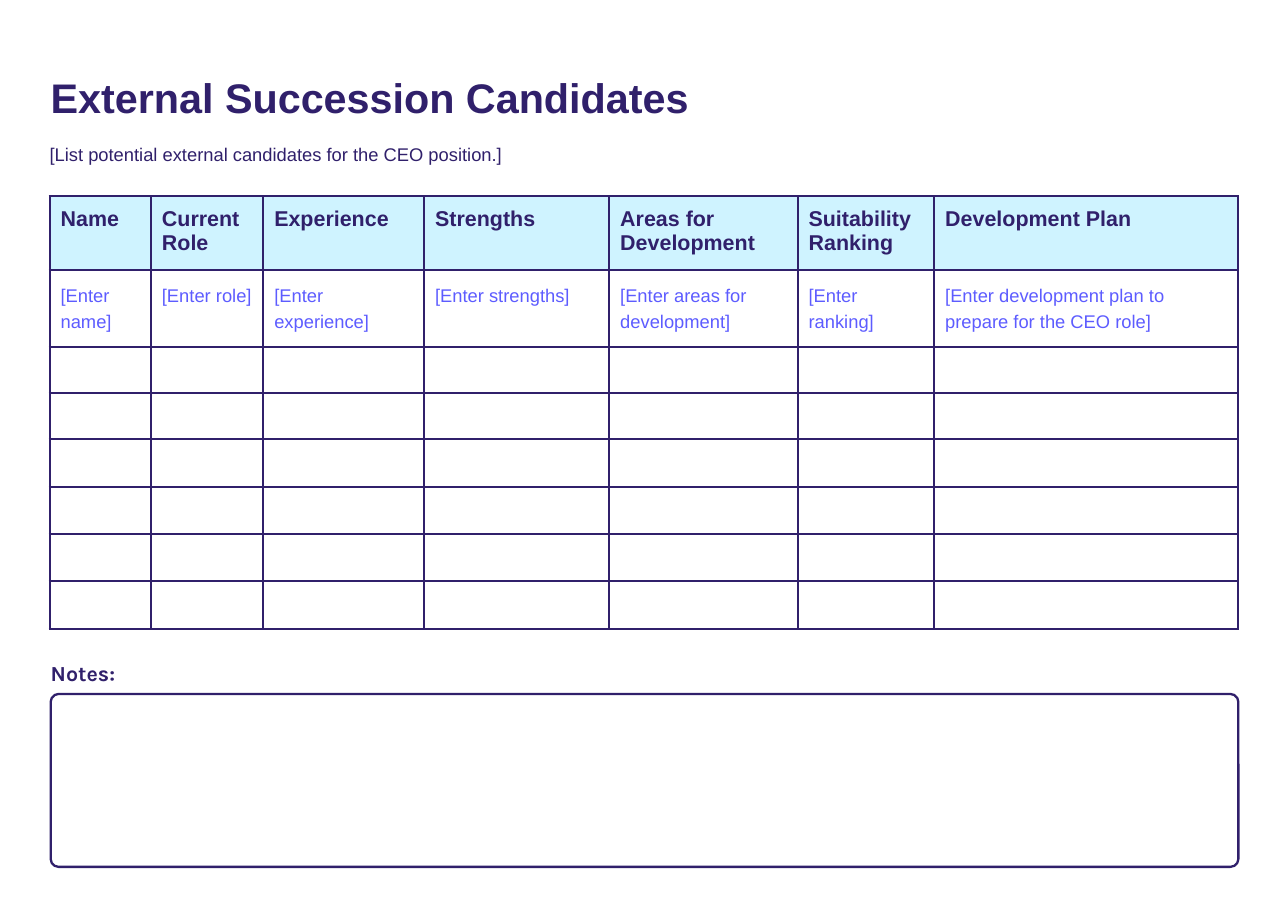
from lxml import etree
from pptx import Presentation
from pptx.dml.color import RGBColor
from pptx.enum.shapes import MSO_SHAPE
from pptx.enum.text import MSO_ANCHOR
from pptx.oxml.ns import qn
from pptx.util import Inches, Pt

NAVY = RGBColor(0x30, 0x20, 0x6B)
VIOLET = RGBColor(0x5D, 0x5C, 0xFF)
PALE_BLUE = RGBColor(0xCF, 0xF3, 0xFF)
WHITE = RGBColor(0xFF, 0xFF, 0xFF)
ROUNDED = MSO_SHAPE.ROUNDED_RECTANGLE
TOP, MIDDLE = MSO_ANCHOR.TOP, MSO_ANCHOR.MIDDLE

COLUMNS = [
    ("Name", "[Enter name]", 0.92),
    ("Current Role", "[Enter role]", 1.02),
    ("Experience", "[Enter experience]", 1.46),
    ("Strengths", "[Enter strengths]", 1.68),
    ("Areas for Development", "[Enter areas for development]", 1.71),
    ("Suitability\nRanking", "[Enter ranking]", 1.24),
    ("Development Plan", "[Enter development plan to prepare for the CEO role]", 2.76),
]
ROW_HEIGHTS = [0.64, 0.67, 0.42, 0.42, 0.43, 0.43, 0.43, 0.43]


def write(frame, text, size, color, bold, spacing, font="Arial"):
    """Fill a text frame and format all of its runs alike."""
    frame.text = text
    frame.word_wrap = True
    for paragraph in frame.paragraphs:
        paragraph.line_spacing = spacing
        for run in paragraph.runs:
            run.font.name = font
            run.font.size = Pt(size)
            run.font.bold = bold
            run.font.color.rgb = color


def add_borders(cell):
    properties = cell._tc.get_or_add_tcPr()
    for side in ("a:lnL", "a:lnR", "a:lnT", "a:lnB"):
        line = etree.SubElement(properties, qn(side), w=str(Pt(1.5)))
        fill = etree.SubElement(line, qn("a:solidFill"))
        etree.SubElement(fill, qn("a:srgbClr"), val=str(NAVY))


prs = Presentation()
prs.slide_width = Inches(11.69)
prs.slide_height = Inches(8.27)
slide = prs.slides.add_slide(prs.slide_layouts[6])

notes_area = slide.shapes.add_shape(
    ROUNDED, Inches(0.46), Inches(6.3), Inches(10.78), Inches(1.57))
notes_area.adjustments[0] = 0.046
notes_area.shadow.inherit = False
notes_area.fill.solid()
notes_area.fill.fore_color.rgb = WHITE
notes_area.line.color.rgb = NAVY
notes_area.line.width = Pt(1.5)

# left, top, width, height, anchor, text, size, bold, line spacing, font
headings = [
    (0.46, 0.57, 9.1, 0.55, MIDDLE, "External Succession Candidates", 27, True, 1.15, "Arial"),
    (0.45, 1.25, 10.78, 0.28, TOP,
     "[List potential external candidates for the CEO position.]", 12, False, 1.25, "Arial"),
    (0.46, 5.96, 1.66, 0.24, TOP, "Notes:", 14, True, 1.14, "Karla"),
]
for left, top, width, height, anchor, text, size, bold, spacing, font in headings:
    heading = slide.shapes.add_textbox(
        Inches(left), Inches(top), Inches(width), Inches(height)).text_frame
    heading.margin_left = heading.margin_right = 0
    heading.margin_top = heading.margin_bottom = 0
    heading.vertical_anchor = anchor
    write(heading, text, size, NAVY, bold, spacing, font)

candidates = slide.shapes.add_table(
    len(ROW_HEIGHTS), len(COLUMNS), Inches(0.45), Inches(1.78),
    Inches(10.78), Inches(sum(ROW_HEIGHTS))).table
candidates.first_row = False
candidates.horz_banding = False

for row, height in zip(candidates.rows, ROW_HEIGHTS):
    row.height = Inches(height)
for column, (label, prompt, width) in enumerate(COLUMNS):
    candidates.columns[column].width = Inches(width)
    for row in range(len(ROW_HEIGHTS)):
        cell = candidates.cell(row, column)
        add_borders(cell)
        cell.fill.solid()
        cell.fill.fore_color.rgb = PALE_BLUE if row == 0 else WHITE
        if row < 2:
            cell.margin_left = cell.margin_right = Inches(0.1)
            cell.margin_top = cell.margin_bottom = Inches(0.1)
    write(candidates.cell(0, column).text_frame, label, 14, NAVY, True, 1.0)
    write(candidates.cell(1, column).text_frame, prompt, 12, VIOLET, False, 1.25)

prs.save("out.pptx")
